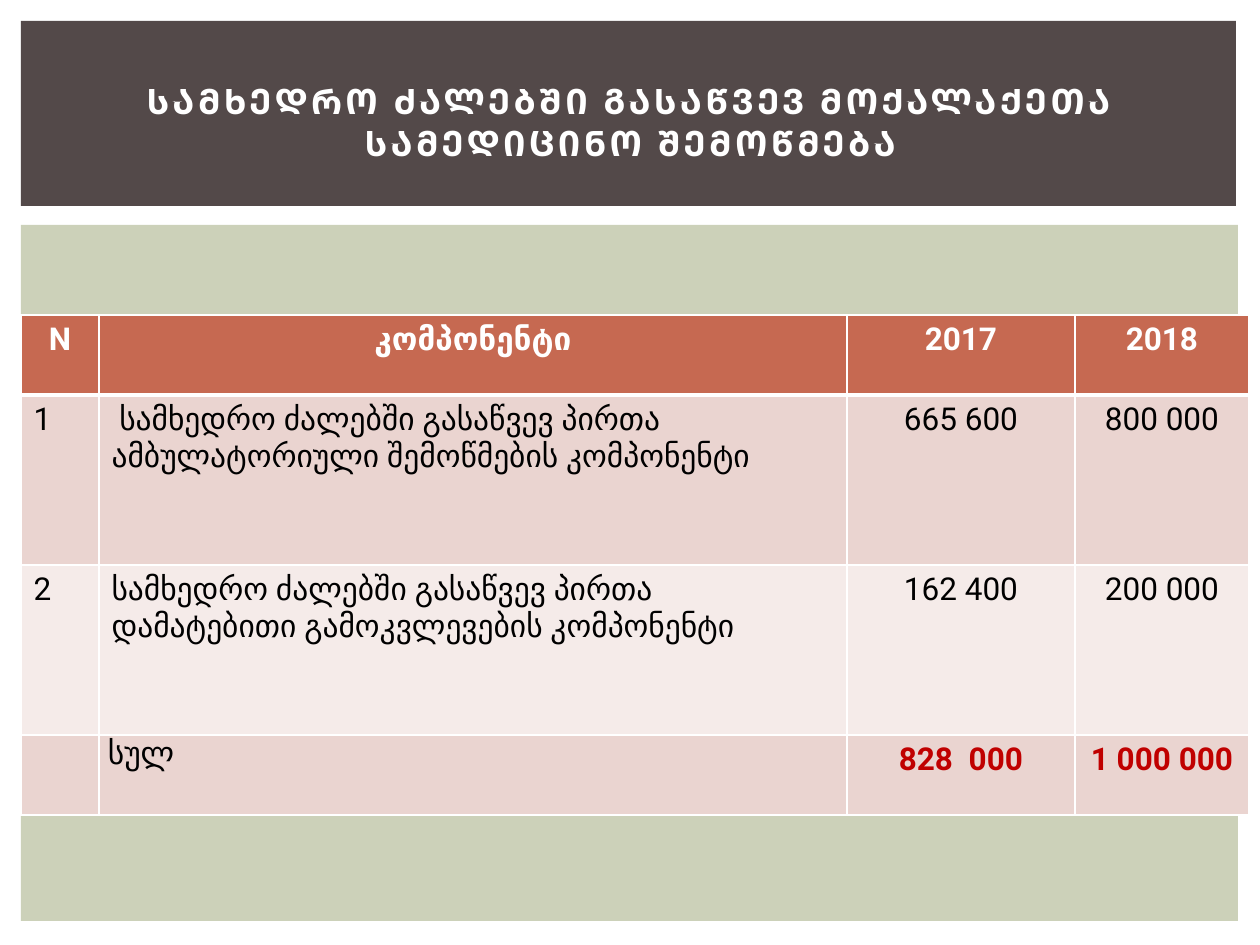
from dataclasses import dataclass

from lxml.etree import SubElement
from pptx import Presentation
from pptx.dml.color import RGBColor
from pptx.enum.shapes import MSO_SHAPE as Preset
from pptx.enum.text import MSO_ANCHOR as Anchor, PP_ALIGN as Align
from pptx.oxml.ns import qn
from pptx.util import Emu, Pt

EMU_PER_PX = 914400 / 126


@dataclass(frozen=True)
class Theme:
    font: str = "Roboto"
    white: str = "FFFFFF"
    black: str = "000000"
    red: str = "C00000"
    banner: str = "534949"
    panel: str = "CCD1B9"
    header: str = "C66951"
    band_dark: str = "EAD4D0"
    band_light: str = "F5EBE9"
    title_size: int = 20
    table_size: int = 18
    title_spacing: int = 200
    thin: int = 1
    thick: int = 3


@dataclass(frozen=True)
class Box:
    left: int
    top: int
    width: int
    height: int

    def emu(self) -> tuple:
        return tuple(px(n) for n in (self.left, self.top, self.width, self.height))


@dataclass(frozen=True)
class BudgetRow:
    texts: tuple
    height: int
    fill: str
    aligns: tuple
    colors: tuple
    bold: tuple


THEME = Theme()
LEFT, CENTER = Align.LEFT, Align.CENTER
BANNER = Box(21, 21, 1215, 185)
PANEL = Box(21, 225, 1217, 696)
TITLE = Box(53, 49, 1155, 145)
BUDGET = Box(21, 315, 1228, 500)
COLUMNS = (78, 748, 228, 174)
BODY_ALIGNS = (LEFT, LEFT, CENTER, CENTER)
BLACK = (THEME.black,) * 4
ROWS = (
    BudgetRow(("N", "კომპონენტი", "2017", "2018"), 80, THEME.header,
              (CENTER,) * 4, (THEME.white,) * 4, (True,) * 4),
    BudgetRow(("1", " სამხედრო ძალებში გასაწვევ პირთა ამბულატორიული შემოწმების კომპონენტი",
               "665 600", "800 000"), 170, THEME.band_dark, BODY_ALIGNS, BLACK, (False,) * 4),
    BudgetRow(("2", "სამხედრო ძალებში გასაწვევ პირთა დამატებითი გამოკვლევების კომპონენტი",
               "162 400", "200 000"), 170, THEME.band_light, BODY_ALIGNS, BLACK, (False,) * 4),
    BudgetRow(("", "სულ", "828  000", "1 000 000"), 80, THEME.band_dark, BODY_ALIGNS,
              BLACK[:2] + (THEME.red,) * 2, (False, False, True, True)),
)


def px(n: int) -> Emu:
    return Emu(round(n * EMU_PER_PX))


def style(paragraph, size: int, color: str, bold: bool, align) -> None:
    paragraph.alignment = align
    font = paragraph.font
    font.name, font.size, font.bold = THEME.font, Pt(size), bold
    font.color.rgb = RGBColor.from_string(color)


def add_block(slide, box: Box, fill: str) -> None:
    block = slide.shapes.add_shape(Preset.RECTANGLE, *box.emu())
    block.shadow.inherit = False
    block.fill.solid()
    block.fill.fore_color.rgb = RGBColor.from_string(fill)
    block.line.fill.background()


def set_borders(cell, top: int, bottom: int) -> None:
    props = cell._tc.get_or_add_tcPr()
    for side, width in (("L", THEME.thin), ("R", THEME.thin), ("T", top), ("B", bottom)):
        line = SubElement(props, qn(f"a:ln{side}"), w=str(Pt(width)))
        SubElement(SubElement(line, qn("a:solidFill")), qn("a:srgbClr"), val=THEME.white)


def add_budget(slide) -> None:
    table = slide.shapes.add_table(len(ROWS), len(COLUMNS), *BUDGET.emu()).table
    table.first_row = table.horz_banding = False
    for column, width in zip(table.columns, COLUMNS):
        column.width = px(width)
    for r, row in enumerate(ROWS):
        table.rows[r].height = px(row.height)
        for c, text in enumerate(row.texts):
            cell = table.cell(r, c)
            set_borders(cell, THEME.thick if r == 1 else THEME.thin,
                        THEME.thick if r == 0 else THEME.thin)
            cell.fill.solid()
            cell.fill.fore_color.rgb = RGBColor.from_string(row.fill)
            cell.text = text
            style(cell.text_frame.paragraphs[0], THEME.table_size,
                  row.colors[c], row.bold[c], row.aligns[c])
    total = table.cell(len(ROWS) - 1, 1)
    total.margin_left = total.margin_right = px(9)
    total.margin_top = total.margin_bottom = 0
    label = total.text_frame.paragraphs[0]
    label.space_before = label.space_after = Pt(1)


def place_title(slide) -> None:
    title = slide.shapes.title
    title.left, title.top, title.width, title.height = TITLE.emu()
    frame = title.text_frame
    frame.text = "ᲡᲐᲛᲮᲔᲓᲠᲝ ᲫᲐᲚᲔᲑᲨᲘ ᲒᲐᲡᲐᲬᲕᲔᲕ ᲛᲝᲥᲐᲚᲐᲥᲔᲗᲐ ᲡᲐᲛᲔᲓᲘᲪᲘᲜᲝ ᲨᲔᲛᲝᲬᲛᲔᲑᲐ"
    frame.word_wrap = True
    frame.vertical_anchor = Anchor.MIDDLE
    heading = frame.paragraphs[0]
    style(heading, THEME.title_size, THEME.white, True, CENTER)
    heading.runs[0].font._element.set("spc", str(THEME.title_spacing))
    slide.shapes.element.append(title.element)


def main() -> None:
    deck = Presentation()
    deck.slide_width, deck.slide_height = px(1260), px(945)
    slide = deck.slides.add_slide(deck.slide_layouts[5])
    add_block(slide, PANEL, THEME.panel)
    add_block(slide, BANNER, THEME.banner)
    add_budget(slide)
    place_title(slide)
    deck.save("out.pptx")


if __name__ == "__main__":
    main()
